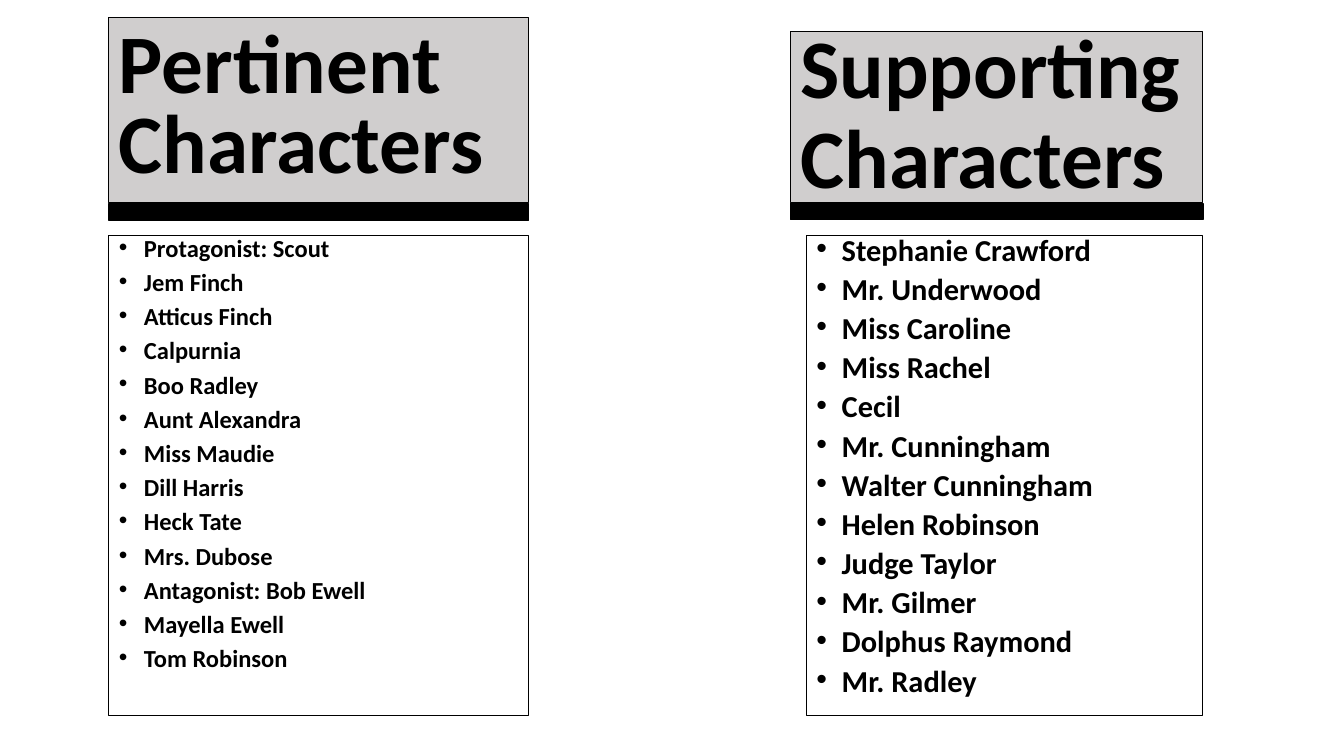
from pptx import Presentation
from pptx.dml.color import RGBColor
from pptx.enum.shapes import MSO_SHAPE as Shape
from pptx.enum.text import MSO_ANCHOR as Anchor, PP_ALIGN as Align
from pptx.oxml.ns import qn
from pptx.util import Inches, Pt
from lxml.etree import SubElement

BLACK, GREY = "000000", "D0CECE"
BAR_TOP, LIST_TOP, LIST_HEIGHT = 2.02, 2.34, 4.76
TITLE_SIZE = 59.4
INDENT = Inches(0.25)

PERTINENT = [
    "Protagonist: Scout", "Jem Finch", "Atticus Finch", "Calpurnia",
    "Boo Radley", "Aunt Alexandra", "Miss Maudie", "Dill Harris",
    "Heck Tate", "Mrs. Dubose", "Antagonist: Bob Ewell",
    "Mayella Ewell", "Tom Robinson",
]
SUPPORTING = [
    "Stephanie Crawford", "Mr. Underwood", "Miss Caroline", "Miss Rachel",
    "Cecil", "Mr. Cunningham", "Walter Cunningham", "Helen Robinson",
    "Judge Taylor", "Mr. Gilmer", "Dolphus Raymond", "Mr. Radley",
]


def color(hex_value):
    return RGBColor.from_string(hex_value)


def add_box(slide, left, top, width, height, fill=None, line_width=0.75):
    box = slide.shapes.add_shape(
        Shape.RECTANGLE, *map(Inches, (left, top, width, height)))
    box.shadow.inherit = False
    if fill:
        box.fill.solid()
        box.fill.fore_color.rgb = color(fill)
    else:
        box.fill.background()
    box.line.color.rgb = color(BLACK)
    box.line.width = Pt(line_width)
    return box


def write_lines(box, lines, size, spacing, anchor, space_before=0):
    """Fill the box with one bold, left-aligned paragraph per line."""
    frame = box.text_frame
    frame.word_wrap = True
    frame.vertical_anchor = anchor
    frame.text = "\n".join(lines)
    paragraph_format = {"alignment": Align.LEFT, "line_spacing": spacing,
                        "space_before": Pt(space_before)}
    font_format = {"name": "Calibri", "size": Pt(size), "bold": True}
    for paragraph in frame.paragraphs:
        for key, value in paragraph_format.items():
            setattr(paragraph, key, value)
        for run in paragraph.runs:
            for key, value in font_format.items():
                setattr(run.font, key, value)
            run.font.color.rgb = color(BLACK)
    return frame.paragraphs


def add_bullet(paragraph):
    properties = paragraph._p.get_or_add_pPr()
    properties.set("marL", str(INDENT))
    properties.set("indent", str(-INDENT))
    SubElement(properties, qn("a:buFont"), typeface="Arial")
    SubElement(properties, qn("a:buChar"), char="•")


def add_heading(slide, left, top, width, title, spacing, bar_height):
    """Place a grey title box that ends just above a black bar."""
    heading = add_box(slide, left, top, width, BAR_TOP - 0.01 - top, GREY)
    write_lines(heading, [title], TITLE_SIZE, spacing, Anchor.MIDDLE)
    add_box(slide, left, BAR_TOP, width, bar_height, BLACK, 1)


def add_character_list(slide, left, width, names, size):
    roster = add_box(slide, left, LIST_TOP, width, LIST_HEIGHT)
    for paragraph in write_lines(roster, names, size, 0.7, Anchor.TOP, 9.75):
        add_bullet(paragraph)


def main():
    deck = Presentation()
    deck.slide_width, deck.slide_height = Inches(13.33), Inches(7.5)
    slide = deck.slides.add_slide(deck.slide_layouts[6])
    add_heading(slide, 1.08, 0.17, 4.16, "Pertinent\vCharacters", 0.8, 0.17)
    add_character_list(slide, 1.08, 4.16, PERTINENT, 17.5)
    add_heading(slide, 7.84, 0.31, 4.09, "Supporting\vCharacters", 0.9, 0.16)
    add_character_list(slide, 8, 3.93, SUPPORTING, 21.7)
    deck.save("out.pptx")


if __name__ == "__main__":
    main()
